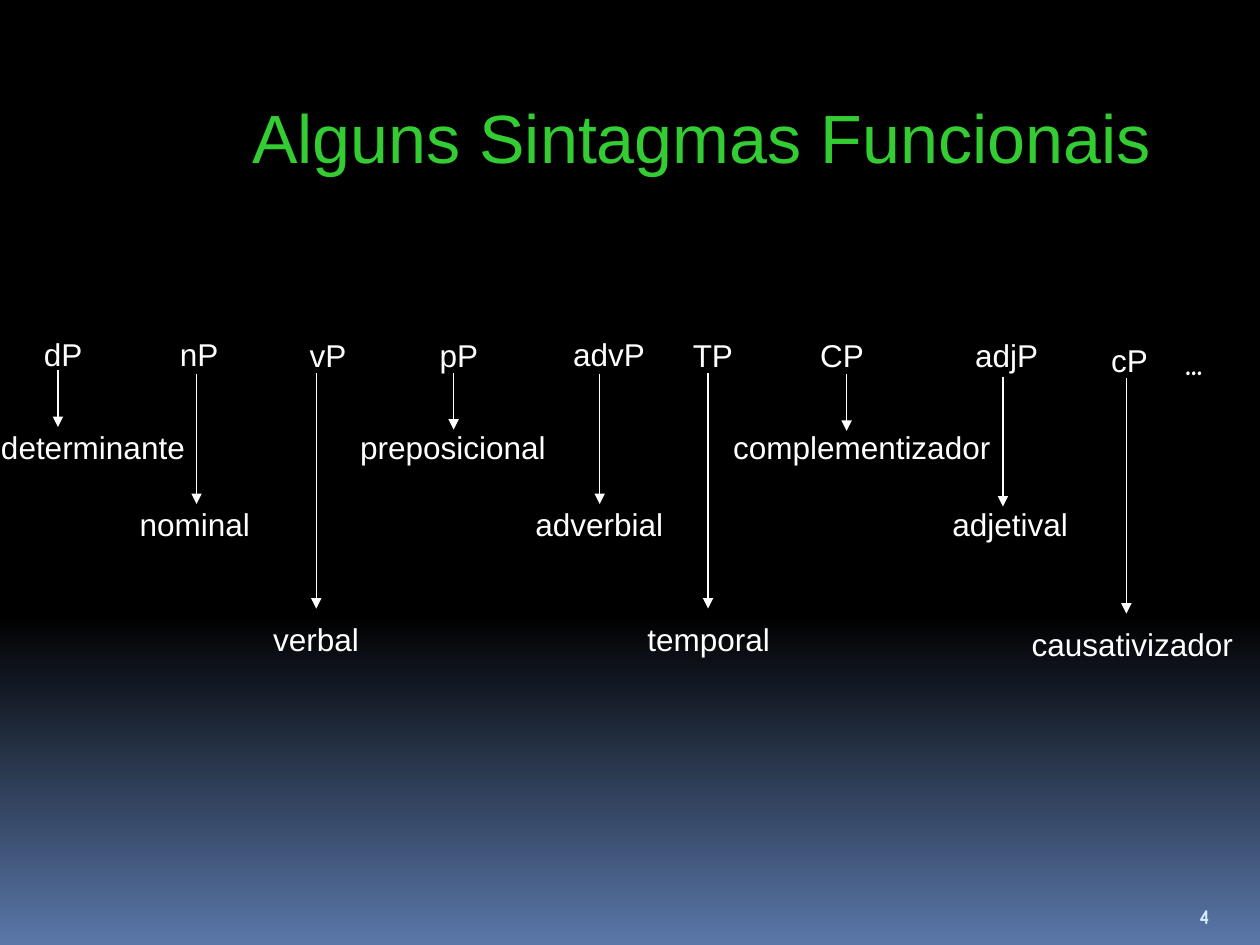
from pptx import Presentation
from pptx.dml.color import RGBColor
from pptx.enum.shapes import MSO_CONNECTOR
from pptx.enum.text import MSO_ANCHOR, MSO_AUTO_SIZE, PP_ALIGN
from pptx.oxml.ns import qn
from pptx.util import Inches, Pt
from lxml.etree import SubElement

TITLE = "Alguns Sintagmas Funcionais"
# symbol, (left, top, width), name, (left, width), arrow (x, top), level
PHRASES = [
    ("dP", (0.25, 2.61, 0.51), "determinante", (-0.09, 1.66), (0.46, 2.94), 0),
    ("nP", (1.33, 2.61, 0.51), "nominal", (1.01, 1.08), (1.56, 2.97), 1),
    ("vP", (2.36, 2.62, 0.49), "verbal", (2.07, 0.88), (2.51, 2.96), 2),
    ("pP", (3.39, 2.62, 0.51), "preposicional", (2.76, 1.67), (3.6, 2.96), 0),
    ("advP", (4.45, 2.61, 0.77), "adverbial", (4.15, 1.22), (4.76, 2.97), 1),
    ("TP", (5.4, 2.62, 0.52), "temporal", (5.04, 1.17), (5.62, 2.96), 2),
    ("CP", (6.41, 2.62, 0.55), "complementizador", (5.72, 2.24), (6.72, 2.97), 0),
    ("adjP", (7.64, 2.62, 0.7), "adjetival", (7.46, 1.12), (7.96, 2.99), 1),
    ("cP", (8.72, 2.66, 0.49), "causativizador", (8.09, 1.8), (8.94, 3.0), 2),
]
NAME_TOPS = [3.35, 3.96, 4.87]
ARROW_LENGTHS = [0.45, 1.03, 1.87]
LAST_NAME_DROP = 0.04
LINE_HEIGHT = 0.4

THEME = {
    "font": "Arial", "accent_font": "Comic Neue",
    "title": "33CC33", "text": "FFFFFF", "number": "D6ECFF",
    "sky": "000000", "horizon": "5A77A9",
    "title_size": 39, "text_size": 18, "number_size": 12, "line": 0.75,
}


def color(key):
    return RGBColor.from_string(THEME[key])


def write(shape, text, *, ink="text", size="text_size", font="font",
          bold=False, wrap=False, anchor=MSO_ANCHOR.TOP):
    frame = shape.text_frame
    frame.text = text
    frame.word_wrap = wrap
    frame.auto_size = MSO_AUTO_SIZE.NONE
    frame.vertical_anchor = anchor
    paragraph = frame.paragraphs[0]
    paragraph.alignment = PP_ALIGN.LEFT
    style = paragraph.runs[0].font
    style.name, style.size, style.bold = THEME[font], Pt(THEME[size]), bold
    style.color.rgb = color(ink)


def add_label(slide, text, left, top, width, **text_format):
    box = slide.shapes.add_textbox(
        Inches(left), Inches(top), Inches(width), Inches(LINE_HEIGHT))
    write(box, text, **text_format)


def add_down_arrow(slide, x, top, length):
    arrow = slide.shapes.add_connector(
        MSO_CONNECTOR.STRAIGHT,
        Inches(x), Inches(top), Inches(x), Inches(top + length))
    arrow.line.color.rgb = color("text")
    arrow.line.width = Pt(THEME["line"])
    SubElement(arrow.line._get_or_add_ln(), qn("a:tailEnd"), type="triangle")
    SubElement(arrow._element.spPr, qn("a:effectLst"))


def paint_background(slide):
    fill = slide.background.fill
    fill.gradient()
    fill.gradient_angle = 270
    stops = zip(fill.gradient_stops, [("sky", 0.65), ("horizon", 1.0)])
    for stop, (ink, position) in stops:
        stop.color.rgb = color(ink)
        stop.position = position


def main():
    deck = Presentation()
    deck.slide_width, deck.slide_height = Inches(10), Inches(7.5)
    slide = deck.slides.add_slide(deck.slide_layouts[5])
    paint_background(slide)

    title = slide.shapes.title
    title.left, title.top = Inches(1.9), Inches(0.64)
    title.width, title.height = Inches(7.44), Inches(0.88)
    write(title, TITLE, ink="title", size="title_size", wrap=True,
          anchor=MSO_ANCHOR.MIDDLE)

    for symbol, symbol_place, name, (left, width), arrow_start, level in PHRASES:
        drop = LAST_NAME_DROP if symbol == "cP" else 0
        add_label(slide, symbol, *symbol_place)
        add_label(slide, name, left, NAME_TOPS[level] + drop, width)
        add_down_arrow(slide, *arrow_start, ARROW_LENGTHS[level])

    add_label(slide, "...", 9.31, 2.68, 0.43,
              font="accent_font", bold=True, wrap=True)
    add_label(slide, "4", 9.42, 7.02, 0.5, ink="number", size="number_size",
              font="accent_font", bold=True, wrap=True, anchor=MSO_ANCHOR.BOTTOM)
    deck.save("out.pptx")


if __name__ == "__main__":
    main()
